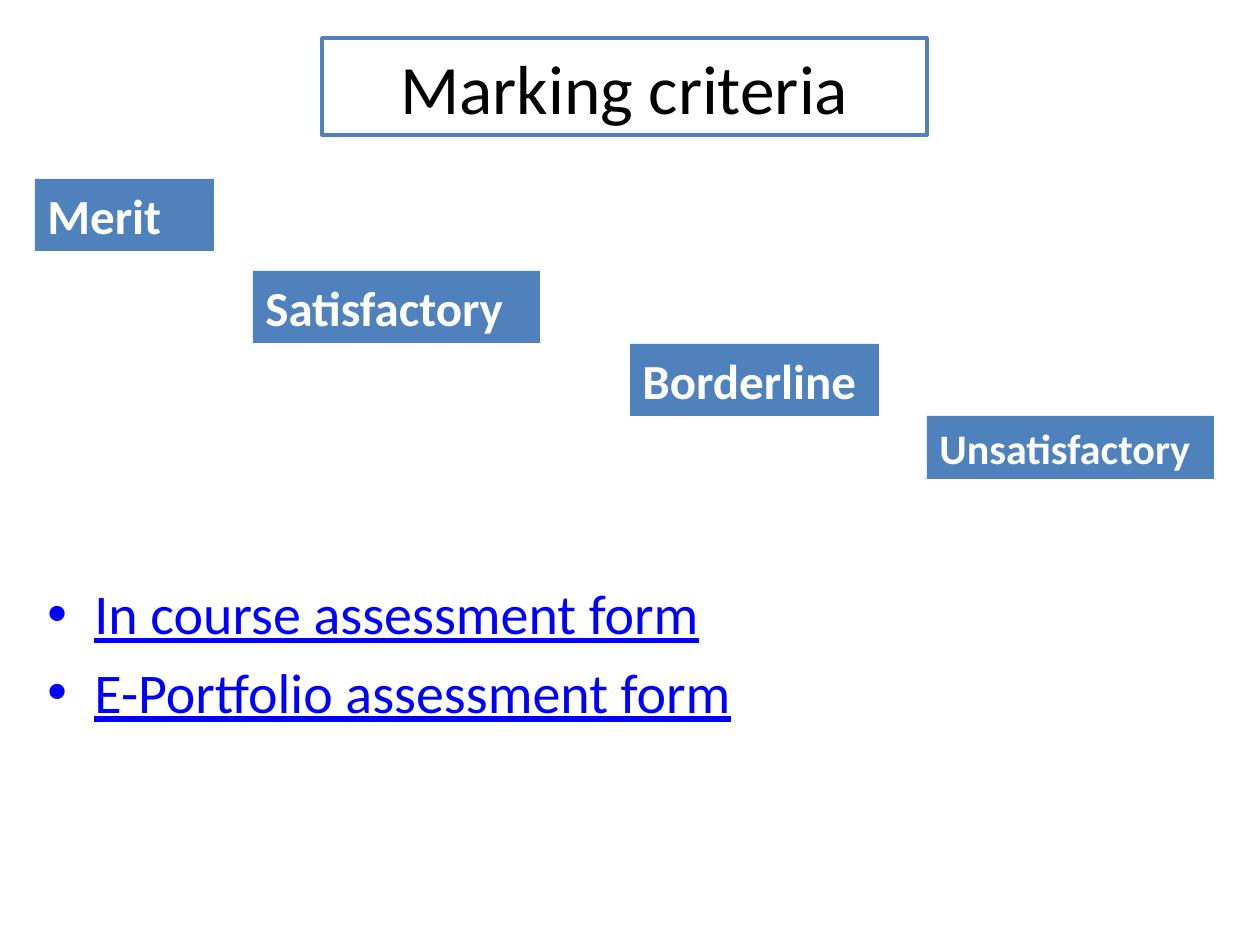
from pptx import Presentation
from pptx.dml.color import RGBColor
from pptx.enum.shapes import MSO_SHAPE
from pptx.enum.text import MSO_ANCHOR, PP_ALIGN
from pptx.oxml.ns import qn
from pptx.util import Emu, Pt
from lxml import etree

RECTANGLE = MSO_SHAPE.RECTANGLE
MIDDLE, TOP = MSO_ANCHOR.MIDDLE, MSO_ANCHOR.TOP
CENTER, LEFT = PP_ALIGN.CENTER, PP_ALIGN.LEFT

BLUE = RGBColor(0x4F, 0x81, 0xBD)
LINK_BLUE = RGBColor(0x00, 0x00, 0xFF)
WHITE = RGBColor(0xFF, 0xFF, 0xFF)
BLACK = RGBColor(0x00, 0x00, 0x00)

PX = 914400 // 126
INDENT = 47


def px(*lengths):
    return [Emu(length * PX) for length in lengths]


def write(paragraph, text, color, **formats):
    run = paragraph.add_run()
    run.text = text
    run.font.name = "Calibri"
    run.font.color.rgb = color
    for name, value in formats.items():
        setattr(run.font, name, value)


presentation = Presentation()
presentation.slide_width, presentation.slide_height = px(1260, 945)
slide = presentation.slides.add_slide(presentation.slide_layouts[6])

title = slide.shapes.add_shape(RECTANGLE, *px(322, 38, 605, 97))
title.shadow.inherit = False
title.fill.solid()
title.fill.fore_color.rgb = WHITE
title.line.color.rgb = BLUE
title.line.width = Pt(2)
title.text_frame.vertical_anchor = MIDDLE
title_paragraph = title.text_frame.paragraphs[0]
title_paragraph.alignment = CENTER
write(title_paragraph, "Marking criteria", BLACK, size=Pt(39.6))

forms = slide.shapes.add_textbox(*px(35, 175, 1162, 669))
forms_frame = forms.text_frame
forms_frame.word_wrap = True
forms_frame.margin_top = px(404)[0]
for index, form in enumerate(["In course assessment form", "E-Portfolio assessment form"]):
    paragraph = forms_frame.add_paragraph() if index else forms_frame.paragraphs[0]
    paragraph.space_before = Pt(6.4)
    write(paragraph, form, LINK_BLUE, size=Pt(32), underline=True)
    properties = paragraph._p.get_or_add_pPr()
    properties.set("marL", str(INDENT * PX))
    properties.set("indent", str(-INDENT * PX))
    bullet_color = etree.SubElement(properties, qn("a:buClr"))
    etree.SubElement(bullet_color, qn("a:srgbClr"), val=str(LINK_BLUE))
    etree.SubElement(properties, qn("a:buFont"), typeface="Arial")
    etree.SubElement(properties, qn("a:buChar"), char="•")

grades = [
    ("Merit", 35, 179, 179, 72, 28),
    ("Satisfactory", 253, 271, 287, 72, 28),
    ("Borderline", 630, 344, 249, 72, 28),
    ("Unsatisfactory", 927, 416, 287, 63, 24),
]
for grade, left, top, width, height, size in grades:
    box = slide.shapes.add_shape(RECTANGLE, *px(left, top, width, height))
    box.shadow.inherit = False
    box.fill.solid()
    box.fill.fore_color.rgb = BLUE
    box.line.fill.background()
    box.text_frame.word_wrap = True
    box.text_frame.vertical_anchor = TOP
    paragraph = box.text_frame.paragraphs[0]
    paragraph.alignment = LEFT
    write(paragraph, grade, WHITE, size=Pt(size), bold=True)

presentation.save("out.pptx")
